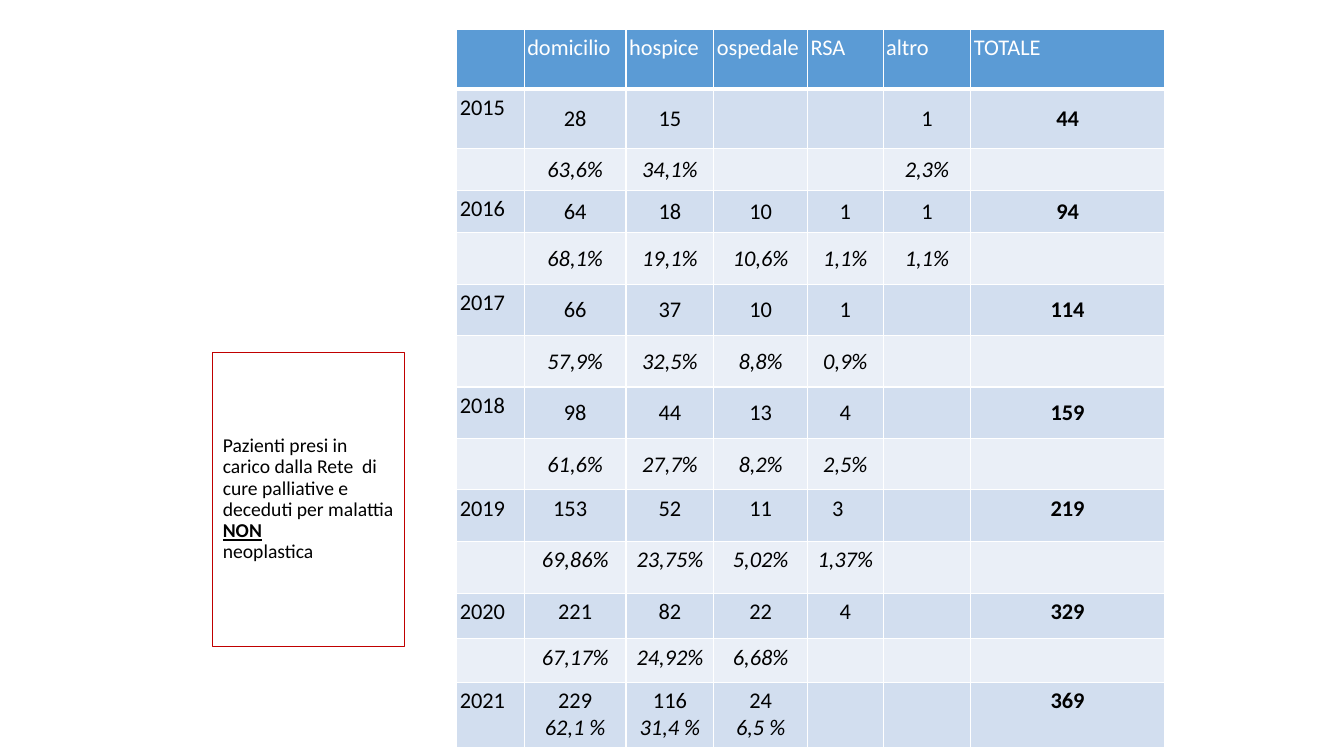
from dataclasses import dataclass

from lxml import etree
from pptx import Presentation
from pptx.dml.color import RGBColor
from pptx.enum.text import MSO_ANCHOR, MSO_AUTO_SIZE, PP_ALIGN
from pptx.oxml.ns import qn
from pptx.util import Inches, Pt

LEFT, CENTER = PP_ALIGN.LEFT, PP_ALIGN.CENTER
TOP, MIDDLE = MSO_ANCHOR.TOP, MSO_ANCHOR.MIDDLE
TITLE_ONLY = 5


@dataclass(frozen=True)
class Theme:
    font: str = "Calibri"
    table_size: float = 16
    title_size: float = 14
    text: str = "000000"
    white: str = "FFFFFF"
    header: str = "5B9BD5"
    count_band: str = "D2DEEF"
    share_band: str = "EAEFF7"
    frame: str = "C00000"


THEME = Theme()
SLIDE_SIZE = (13.33, 7.5)
TITLE_BOX = (2.11, 3.5, 1.9, 2.91)
TABLE_BOX = (4.53, 0.29, 7.02, 7.09)

# Cell margins: left, top, right, bottom
PADDED = (0.03, 0.05, 0.03, 0.05)
TIGHT = (0, 0.01, 0, 0)

COLUMN_WIDTHS = [0.67, 1.01, 0.87, 0.93, 0.75, 0.87, 1.92]
ROW_HEIGHTS = [0.59, 0.59, 0.42, 0.42] + [0.51] * 6 + [0.52, 0.45, 0.43, 0.65]
HEADINGS = ["", "domicilio", "hospice", "ospedale", "RSA", "altro", "TOTALE"]

# Year, patients by place, shares by place, total
YEARS = [
    ("2015", ["28", "15", "", "", "1"], ["63,6%", "34,1%", "", "", "2,3%"], "44"),
    ("2016", ["64", "18", "10", "1", "1"],
     ["68,1%", "19,1%", "10,6%", "1,1%", "1,1%"], "94"),
    ("2017", ["66", "37", "10", "1", ""],
     ["57,9%", "32,5%", "8,8%", "0,9%", ""], "114"),
    ("2018", ["98", "44", "13", "4", ""],
     ["61,6%", "27,7%", "8,2%", "2,5%", ""], "159"),
    ("2019", ["153", "52", "11", "3", ""],
     ["69,86%", "23,75%", "5,02%", "1,37%", ""], "219"),
    ("2020", ["221", "82", "22", "4", ""],
     ["67,17%", "24,92%", "6,68%", "", ""], "329"),
    ("2021", ["229", "116", "24", "", ""],
     ["62,1 %", "31,4 %", "6,5 %", "", ""], "369"),
]
FIRST_PADDED_YEAR = "2019"
LAST_YEAR = YEARS[-1][0]
# Extra right margin for counts set slightly left of centre
COUNT_SHIFTS = {("2019", 1): 0.1, ("2019", 4): 0.15}


def rgb(value):
    return RGBColor.from_string(value)


def add_text(paragraph, text, size=THEME.table_size, color=THEME.text,
             bold=False, italic=False, underline=False, align=LEFT):
    paragraph.alignment = align
    run = paragraph.add_run()
    run.text = text
    font = run.font
    font.name, font.size, font.color.rgb = THEME.font, Pt(size), rgb(color)
    font.bold, font.italic, font.underline = bold, italic, underline


def set_borders(cell, bottom=1):
    properties = cell._tc.get_or_add_tcPr()
    for index, (side, width) in enumerate(
            [("lnL", 1), ("lnR", 1), ("lnT", 1), ("lnB", bottom)]):
        line = etree.Element(qn(f"a:{side}"), w=str(Pt(width)))
        fill = etree.SubElement(line, qn("a:solidFill"))
        etree.SubElement(fill, qn("a:srgbClr"), val=THEME.white)
        properties.insert(index, line)


def format_cell(cell, fill, margins=PADDED, anchor=TOP, bottom=1):
    cell.fill.solid()
    cell.fill.fore_color.rgb = rgb(fill)
    (cell.margin_left, cell.margin_top,
     cell.margin_right, cell.margin_bottom) = map(Inches, margins)
    cell.vertical_anchor = anchor
    set_borders(cell, bottom)


def fill_header(table):
    for column, heading in enumerate(HEADINGS):
        cell = table.cell(0, column)
        format_cell(cell, THEME.header, bottom=3)
        if heading:
            add_text(cell.text_frame.paragraphs[0], heading, color=THEME.white)


def fill_row(table, row, year, values, fill, label="", total="", italic=False):
    padded = year >= FIRST_PADDED_YEAR
    for column, value in enumerate([label, *values, total]):
        cell = table.cell(row, column)
        is_label = column == 0
        margins, anchor = (PADDED, TOP) if padded or is_label else (TIGHT, MIDDLE)
        if label:
            left, top, right, bottom = margins
            margins = (left, top, right + COUNT_SHIFTS.get((year, column), 0), bottom)
        format_cell(cell, fill, margins, anchor)
        if value:
            add_text(cell.text_frame.paragraphs[0], value, italic=italic,
                     bold=column == len(HEADINGS) - 1,
                     align=LEFT if is_label else CENTER)


def add_patients_table(slide, box):
    frame = slide.shapes.add_table(
        len(ROW_HEIGHTS), len(COLUMN_WIDTHS), *map(Inches, box))
    table = frame.table
    for column, width in zip(table.columns, COLUMN_WIDTHS):
        column.width = Inches(width)
    for row, height in zip(table.rows, ROW_HEIGHTS):
        row.height = Inches(height)
    fill_header(table)
    for index, (year, counts, shares, total) in enumerate(YEARS):
        count_row = 1 + 2 * index
        fill_row(table, count_row, year, counts, THEME.count_band, year, total)
        if year != LAST_YEAR:
            fill_row(table, count_row + 1, year, shares, THEME.share_band, italic=True)
            continue
        # The last year holds its shares under the counts
        for column, share in enumerate(shares, start=1):
            if share:
                text_frame = table.cell(count_row, column).text_frame
                add_text(text_frame.add_paragraph(), share, italic=True, align=CENTER)


def add_framed_title(slide, box):
    title = slide.shapes.title
    title.left, title.top, title.width, title.height = map(Inches, box)
    title.line.color.rgb = rgb(THEME.frame)
    title.line.width = Pt(0.75)
    text_frame = title.text_frame
    text_frame.word_wrap = True
    text_frame.auto_size = MSO_AUTO_SIZE.NONE
    text_frame.vertical_anchor = MIDDLE
    paragraph = text_frame.paragraphs[0]
    paragraph.line_spacing = 0.9
    size = THEME.title_size
    add_text(paragraph, "Pazienti presi in carico dalla Rete  di cure palliative "
             "e deceduti per malattia ", size=size)
    add_text(paragraph, "NON", size=size, bold=True, underline=True)
    paragraph.add_line_break()
    add_text(paragraph, "neoplastica", size=size)


def main():
    presentation = Presentation()
    presentation.slide_width, presentation.slide_height = map(Inches, SLIDE_SIZE)
    slide = presentation.slides.add_slide(presentation.slide_layouts[TITLE_ONLY])
    add_patients_table(slide, TABLE_BOX)
    add_framed_title(slide, TITLE_BOX)
    presentation.save("out.pptx")


if __name__ == "__main__":
    main()
